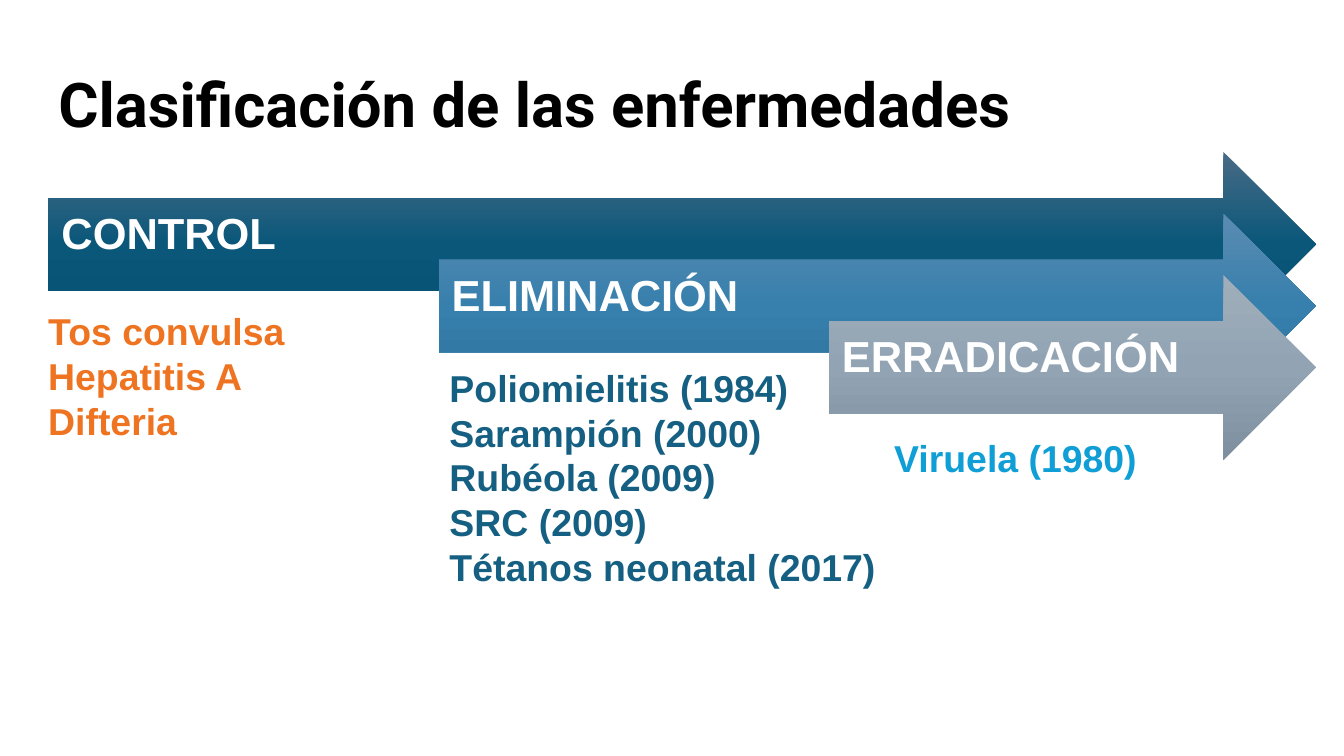
from copy import deepcopy
from dataclasses import dataclass

from pptx import Presentation
from pptx.dml.color import RGBColor
from pptx.enum.shapes import MSO_SHAPE
from pptx.enum.text import MSO_ANCHOR, MSO_AUTO_SIZE
from pptx.oxml.ns import qn
from pptx.util import Inches, Pt

RIGHT_ARROW = MSO_SHAPE.RIGHT_ARROW
TOP = MSO_ANCHOR.TOP
MIDDLE = MSO_ANCHOR.MIDDLE
FIT_SHAPE = MSO_AUTO_SIZE.SHAPE_TO_FIT_TEXT
NO_FIT = MSO_AUTO_SIZE.NONE


@dataclass(frozen=True)
class Theme:
    title_font: str = "Roboto"
    body_font: str = "Arial"
    title_size: float = 44
    stage_size: float = 31
    disease_size: float = 26.7
    title_color: str = "000000"
    stage_color: str = "FFFFFF"
    control_color: str = "EF7421"
    elimination_color: str = "156082"
    eradication_color: str = "0F9ED5"
    control_gradient: tuple = ("486B85", "0A577A", "044F6F")
    elimination_gradient: tuple = ("5A8CB2", "377FAD", "2C709D")
    eradication_gradient: tuple = ("9FAEBA", "92A4B4", "7E90A0")


class DiseaseSlide:
    """Draws titles, stage arrows and disease lists on one slide in one theme."""

    TEXT_INSETS = (0.1, 0.05, 0.1, 0.05)
    STAGE_INSETS = (0.13, 0.13, 0.28, 0.29)
    ARROW_HEIGHT = 1.83
    BAND_OFFSET = 0.45
    BAND_HEIGHT = 0.92
    HEAD_TRIM = 0.46

    def __init__(self, slide, theme):
        self.shapes = slide.shapes
        self.theme = theme

    def text(self, box, lines, size, color, font, insets=TEXT_INSETS,
             anchor=TOP, spacing=None, fit=NO_FIT):
        frame = self.shapes.add_textbox(*map(Inches, box)).text_frame
        frame.word_wrap = True
        frame.auto_size = fit
        frame.vertical_anchor = anchor
        (frame.margin_left, frame.margin_top,
         frame.margin_right, frame.margin_bottom) = map(Inches, insets)
        for index, line in enumerate(lines):
            paragraph = frame.add_paragraph() if index else frame.paragraphs[0]
            paragraph.line_spacing = spacing
            run = paragraph.add_run()
            run.text = line
            run.font.name = font
            run.font.size = Pt(size)
            run.font.bold = True
            run.font.color.rgb = RGBColor.from_string(color)

    def title(self, box, wording):
        theme = self.theme
        self.text(box, [wording], theme.title_size, theme.title_color,
                  theme.title_font, anchor=MIDDLE, spacing=0.9)

    def diseases(self, box, names, color):
        self.text(box, names, self.theme.disease_size, color,
                  self.theme.body_font, fit=FIT_SHAPE)

    def stage(self, left, top, width, name, gradient):
        arrow = self.shapes.add_shape(
            RIGHT_ARROW, Inches(left), Inches(top),
            Inches(width), Inches(self.ARROW_HEIGHT))
        arrow.shadow.inherit = False
        arrow.line.fill.background()
        self.shade(arrow, gradient)
        band = (left, top + self.BAND_OFFSET, width - self.HEAD_TRIM, self.BAND_HEIGHT)
        self.text(band, [name], self.theme.stage_size, self.theme.stage_color,
                  self.theme.body_font, self.STAGE_INSETS, MIDDLE, 0.9)

    def shade(self, shape, colors):
        shape.fill.gradient()
        shape.fill.gradient_angle = 270
        stop_list = shape.element.spPr.find(qn("a:gradFill")).find(qn("a:gsLst"))
        stop_list.insert(1, deepcopy(stop_list[0]))
        for stop, color, position in zip(shape.fill.gradient_stops, colors, (0, 0.5, 1)):
            stop.color.rgb = RGBColor.from_string(color)
            stop.position = position


def main():
    theme = Theme()
    presentation = Presentation()
    presentation.slide_width = Inches(13.33)
    presentation.slide_height = Inches(7.5)
    slide = DiseaseSlide(
        presentation.slides.add_slide(presentation.slide_layouts[6]), theme)

    stages = (
        ("CONTROL", theme.control_gradient),
        ("ELIMINACIÓN", theme.elimination_gradient),
        ("ERRADICACIÓN", theme.eradication_gradient),
    )
    arrow_tip = 13.05
    for step, (name, gradient) in enumerate(stages):
        left = 0.48 + 3.87 * step
        slide.stage(left, 1.51 + 0.61 * step, arrow_tip - left, name, gradient)

    slide.diseases((0.38, 3.01, 3.36, 1.45),
                   ["Tos convulsa", "Hepatitis A", "Difteria"], theme.control_color)
    slide.diseases((4.36, 3.57, 6.67, 2.35),
                   ["Poliomielitis (1984)", "Sarampión (2000)", "Rubéola (2009)",
                    "SRC (2009)", "Tétanos neonatal (2017)"], theme.elimination_color)
    slide.diseases((8.77, 4.27, 2.94, 0.55), ["Viruela (1980)"], theme.eradication_color)
    slide.title((0.48, 0.34, 11.5, 1.45), "Clasificación de las enfermedades")

    presentation.save("out.pptx")


if __name__ == "__main__":
    main()
